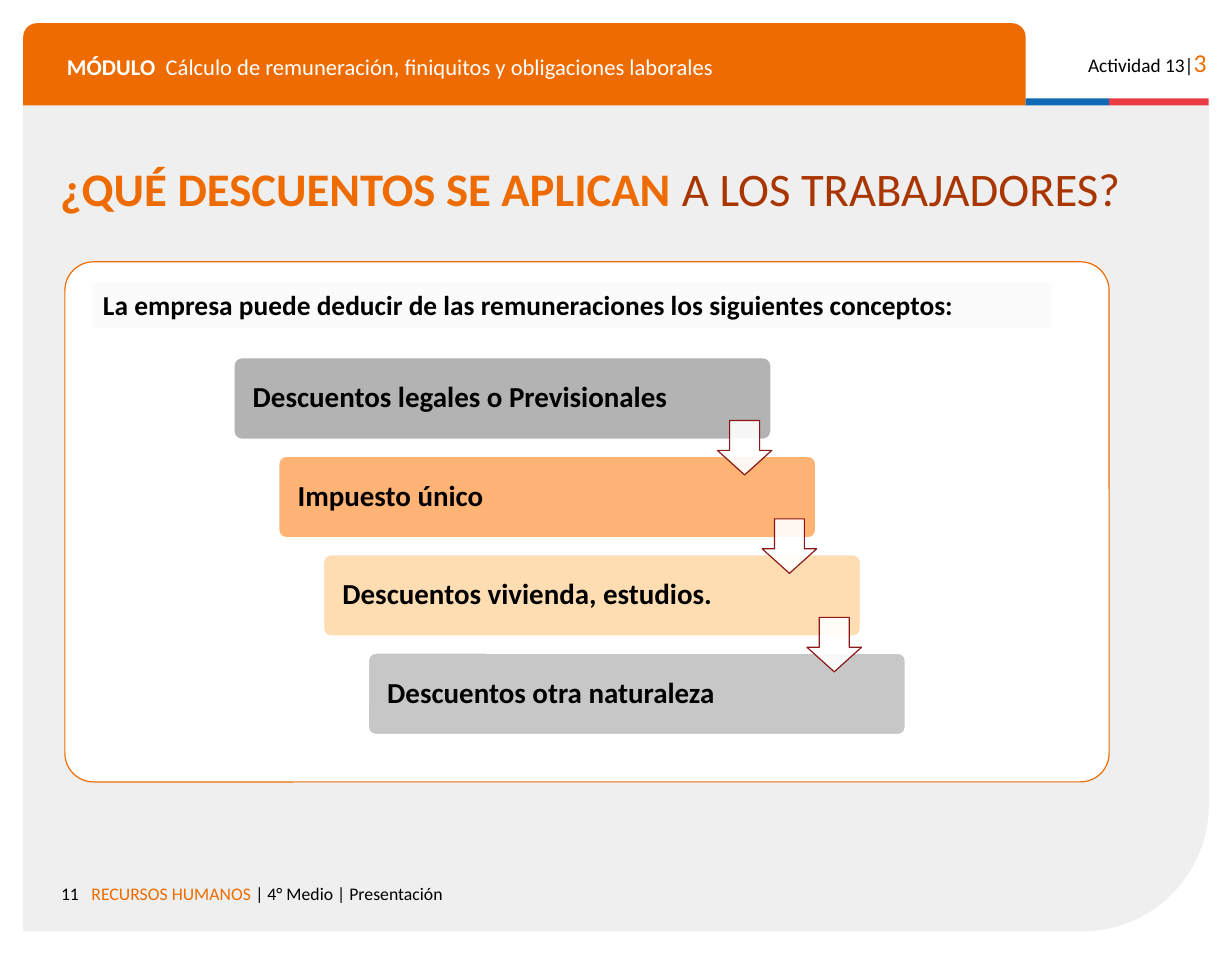
from pptx import Presentation
from pptx import util as u
from pptx.dml.color import RGBColor
from pptx.enum import shapes, text
from pptx.oxml.ns import qn
from lxml import etree

SLIDE_WIDTH, SLIDE_HEIGHT = 10.63, 8.27
FONT = "Calibri"
ORANGE = RGBColor(0xED, 0x6B, 0x00)
RUST = RGBColor(0xA9, 0x35, 0x01)
BLUE = RGBColor(0x0F, 0x69, 0xB4)
RED = RGBColor(0xEB, 0x3C, 0x46)
MAROON = RGBColor(0x80, 0x00, 0x00)
PALE_GRAY = RGBColor(0xEF, 0xEF, 0xEF)
OFF_WHITE = RGBColor(0xFB, 0xFB, 0xFB)
WHITE = RGBColor(0xFF, 0xFF, 0xFF)
BLACK = RGBColor(0x00, 0x00, 0x00)
STEPS = [
    ("Descuentos legales o Previsionales", RGBColor(0xB3, 0xB3, 0xB3)),
    ("Impuesto único", RGBColor(0xFF, 0xB3, 0x75)),
    ("Descuentos vivienda, estudios.", RGBColor(0xFF, 0xDD, 0xB2)),
    ("Descuentos otra naturaleza", RGBColor(0xC7, 0xC7, 0xC7)),
]
PRESET = shapes.MSO_SHAPE


def add_box(slide, preset, box, fill, line=None, line_width=0.75, adjustments=()):
    shape = slide.shapes.add_shape(preset, *map(u.Inches, box))
    shape.shadow.inherit = False
    shape.fill.solid()
    shape.fill.fore_color.rgb = fill
    if line is None:
        shape.line.fill.background()
    else:
        shape.line.color.rgb = line
        shape.line.width = u.Pt(line_width)
    for index, value in enumerate(adjustments):
        shape.adjustments[index] = value
    return shape


def write(shape, runs, size, insets=(0.1, 0.1), align=text.PP_ALIGN.LEFT,
          anchor=text.MSO_ANCHOR.TOP, spacing=None):
    """Write runs of (words, colour, bold[, size]) as one paragraph."""
    frame = shape.text_frame
    frame.word_wrap = True
    frame.vertical_anchor = anchor
    frame.margin_left = frame.margin_right = u.Inches(insets[0])
    frame.margin_top = frame.margin_bottom = u.Inches(insets[1])
    paragraph = frame.paragraphs[0]
    paragraph.alignment = align
    if spacing:
        paragraph.line_spacing = spacing
    for words, color, bold, *own_size in runs:
        run = paragraph.add_run()
        run.text = words
        run.font.name = FONT
        run.font.size = u.Pt(own_size[0] if own_size else size)
        run.font.bold = bold
        run.font.color.rgb = color


def add_text(slide, box, runs, size, **options):
    write(slide.shapes.add_textbox(*map(u.Inches, box)), runs, size, **options)


def set_opacity(shape, percent):
    """Apply the opacity to the fill and the outline."""
    for color in shape._element.spPr.iter(qn("a:srgbClr")):
        etree.SubElement(color, qn("a:alpha"), val=str(percent * 1000))


def add_backdrop(slide, box):
    backdrop = add_box(slide, PRESET.ROUND_1_RECTANGLE, box, PALE_GRAY,
                       adjustments=[0.153])
    backdrop.rotation = 180
    backdrop._element.spPr.xfrm.set("flipH", "1")


def add_header(slide, box):
    left, top, width, height = box
    banner, blue, stripe = 8.65, 0.72, 0.06
    stripe_top = top + height - stripe
    add_box(slide, PRESET.ROUND_2_SAME_RECTANGLE, (left, top, banner, height),
            ORANGE, adjustments=[0.167, 0])
    add_box(slide, PRESET.RECTANGLE, (left + banner, stripe_top, blue, stripe), BLUE)
    add_box(slide, PRESET.RECTANGLE,
            (left + banner + blue, stripe_top, width - banner - blue, stripe), RED)
    add_text(slide, (left + 0.28, top + 0.18, 8.14, 0.35),
             [("MÓDULO  ", WHITE, True),
              ("Cálculo de remuneración, finiquitos y obligaciones laborales", WHITE, False)],
             14, spacing=0.9)
    add_text(slide, (left + width - 1.2, top + 0.1, 1.28, 0.38),
             [("Actividad 13|", BLACK, False), ("3", ORANGE, False, 16)],
             12, align=text.PP_ALIGN.RIGHT)


def add_footer(slide, box):
    left, top, width, height = box
    number = 0.58
    add_text(slide, (left, top, number, height), [("11", BLACK, False)], 11,
             align=text.PP_ALIGN.RIGHT)
    add_text(slide, (left + number - 0.09, top, width - number, height),
             [("RECURSOS HUMANOS ", ORANGE, False),
              ("| 4° Medio | Presentación", BLACK, False)], 11)


def add_title(slide, box):
    add_text(slide, box,
             [("¿QUÉ DESCUENTOS SE APLICAN ", ORANGE, True),
              ("A LOS TRABAJADORES?", RUST, False)], 29, insets=(0.1, 0.05))


def add_panel(slide, box):
    left, top, width, height = box
    add_box(slide, PRESET.ROUNDED_RECTANGLE, box, WHITE, ORANGE, adjustments=[0.055])
    lead = add_box(slide, PRESET.RECTANGLE,
                   (left + 0.23, top + 0.18, width - 0.73, 0.39), OFF_WHITE)
    write(lead, [("La empresa puede deducir de las remuneraciones los siguientes conceptos:",
                  BLACK, True)], 17, insets=(0.1, 0.05))
    add_staircase(slide, (left + 1.45, top + 0.82, 5.81, 3.27))


def add_staircase(slide, box):
    """Descending bars, with an arrow from each one to the next."""
    left, top, width, height = box
    bar_width, bar_height, arrow = 4.65, 0.72, 0.47
    step_x = (width - bar_width) / (len(STEPS) - 1)
    step_y = (height - bar_height) / (len(STEPS) - 1)
    for index, (label, color) in enumerate(STEPS):
        bar = add_box(slide, PRESET.ROUNDED_RECTANGLE,
                      (left + index * step_x, top + index * step_y, bar_width, bar_height),
                      color, WHITE, 2, [0.1])
        write(bar, [(label, BLACK, True)], 18, insets=(0.15, 0.07),
              anchor=text.MSO_ANCHOR.MIDDLE, spacing=0.9)
    for index in range(len(STEPS) - 1):
        pointer = add_box(slide, PRESET.DOWN_ARROW,
                          (left + bar_width - arrow + index * step_x,
                           top + 0.55 + index * step_y, arrow, arrow),
                          WHITE, MAROON, adjustments=[0.55, 0.45])
        set_opacity(pointer, 90)


def main():
    presentation = Presentation()
    presentation.slide_width = u.Inches(SLIDE_WIDTH)
    presentation.slide_height = u.Inches(SLIDE_HEIGHT)
    slide = presentation.slides.add_slide(presentation.slide_layouts[6])
    margin = 0.2
    inner_width = SLIDE_WIDTH - 2 * margin
    add_backdrop(slide, (margin, 0.9, inner_width, 7.14))
    add_header(slide, (margin, margin, inner_width, 0.71))
    add_footer(slide, (margin, 7.53, 7.63, 0.38))
    add_panel(slide, (0.56, 2.26, 9.01, 4.49))
    add_title(slide, (0.42, 1.33, SLIDE_WIDTH - 0.42, 0.59))
    presentation.save("out.pptx")


if __name__ == "__main__":
    main()
